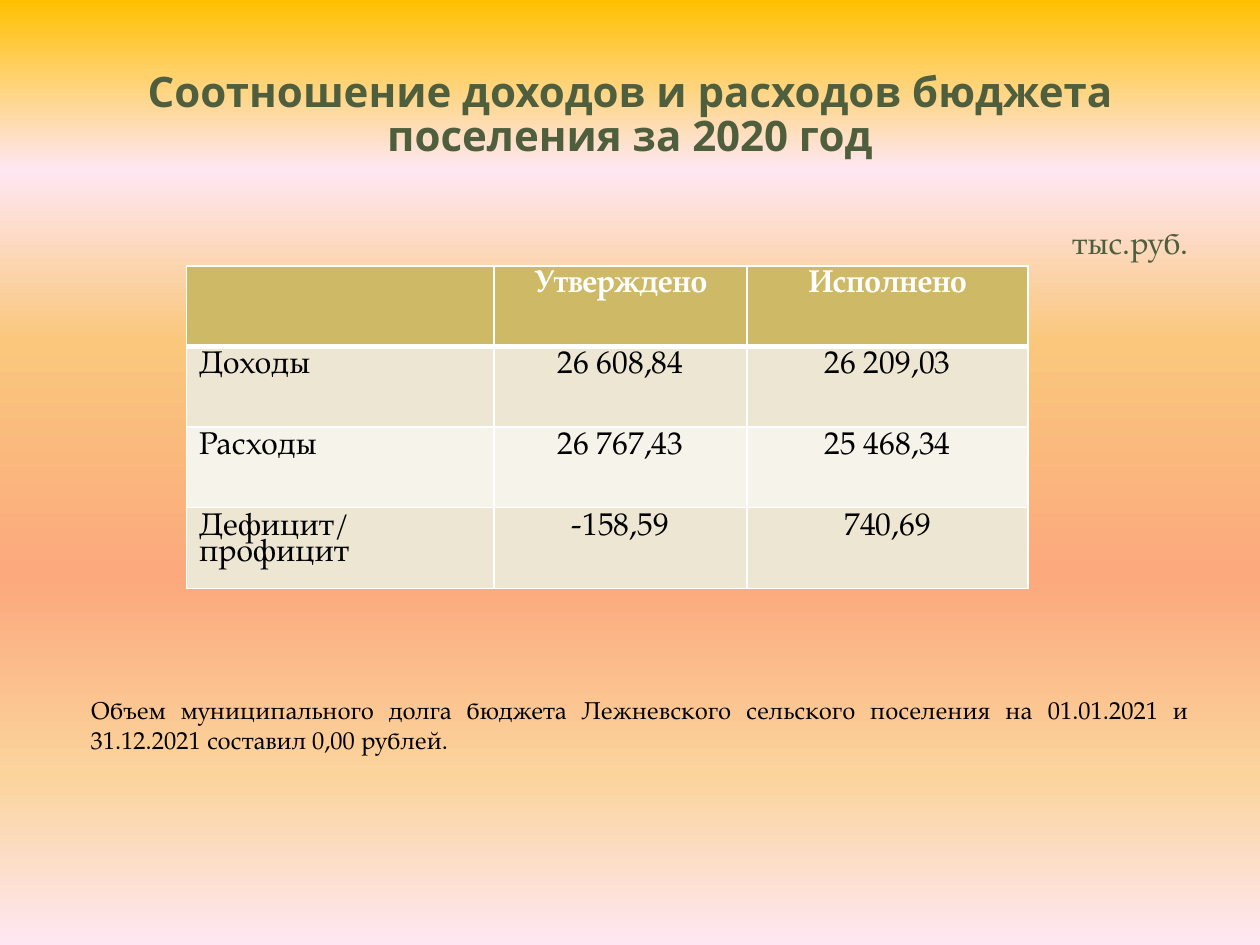
from lxml.etree import SubElement
from pptx import Presentation
from pptx.dml.color import RGBColor
from pptx.enum.text import MSO_ANCHOR, MSO_AUTO_SIZE, PP_ALIGN as AL
from pptx.oxml.ns import qn
from pptx.util import Inches, Pt

GREEN = RGBColor(0x4F, 0x5E, 0x3C)
BLACK = RGBColor(0, 0, 0)
WHITE = RGBColor(0xFF, 0xFF, 0xFF)
GOLD = RGBColor(0xCE, 0xB9, 0x66)
BAND_DARK = RGBColor(0xED, 0xE6, 0xD3)
BAND_LIGHT = RGBColor(0xF6, 0xF3, 0xEA)
SKY = [(0, "FFC000"), (18, "FEE7F2"), (36, "FAC77D"),
       (61, "FBA97D"), (82, "FBD49C"), (100, "FEE7F2")]


class BudgetSlide:
    title_font = "Open Sans"
    body_font = "TeX Gyre Pagella"

    def __init__(self, prs):
        self.s = prs.slides.add_slide(prs.slide_layouts[5])

    def background(self, stops):
        fill = self.s.background.fill
        fill.gradient()
        fill.gradient_angle = 270  # counter-clockwise: top to bottom
        gs_lst = fill.gradient_stops[0]._gs.getparent()
        for gs in list(gs_lst):
            gs_lst.remove(gs)
        for pos, color in stops:
            gs = SubElement(gs_lst, qn("a:gs"), pos=str(pos * 1000))
            SubElement(gs, qn("a:srgbClr"), val=color)

    def set_text(self, tf, text, size, color, align, font=None, bold=False, spacing=None):
        p = tf.paragraphs[0]
        p.text = text
        p.alignment = align
        p.line_spacing = spacing
        for r in p.runs:
            r.font.name = font or self.body_font
            r.font.size, r.font.bold = Pt(size), bold
            r.font.color.rgb = color

    def title(self, text, x, y, w, h):
        sp = self.s.shapes.title
        sp.left, sp.top, sp.width, sp.height = map(Inches, (x, y, w, h))
        tf = sp.text_frame
        tf.word_wrap = True
        tf.auto_size = MSO_AUTO_SIZE.NONE
        tf.vertical_anchor = MSO_ANCHOR.MIDDLE
        self.set_text(tf, text, 24, GREEN, AL.CENTER, self.title_font, True, 0.88)

    def text(self, text, x, y, w, h, size, color, align):
        tf = self.s.shapes.add_textbox(*map(Inches, (x, y, w, h))).text_frame
        tf.word_wrap = True
        tf.auto_size = MSO_AUTO_SIZE.SHAPE_TO_FIT_TEXT
        self.set_text(tf, text, size, color, align)

    def borders(self, cell, **widths):
        tc_pr = cell._tc.get_or_add_tcPr()
        for i, side in enumerate("LRTB"):
            ln = tc_pr.makeelement(qn(f"a:ln{side}"), {"w": str(Pt(widths.get(side, 1)))})
            fill = SubElement(ln, qn("a:solidFill"))
            SubElement(fill, qn("a:srgbClr"), val=str(WHITE))
            tc_pr.insert(i, ln)

    def table(self, rows, x, y, col_widths, row_height):
        frame = self.s.shapes.add_table(
            len(rows), len(col_widths), Inches(x), Inches(y),
            Inches(sum(col_widths)), Inches(row_height * len(rows)))
        table = frame.table
        for col, width in zip(table.columns, col_widths):
            col.width = Inches(width)
        for i, row in enumerate(rows):
            table.rows[i].height = Inches(row_height)
            head = i == 0
            for j, value in enumerate(row):
                cell = table.cell(i, j)
                cell.fill.solid()
                cell.fill.fore_color.rgb = GOLD if head else BAND_DARK if i % 2 else BAND_LIGHT
                # The rule under the header is thicker
                self.borders(cell, B=3 if head else 1, T=3 if i == 1 else 1)
                if value:
                    self.set_text(cell.text_frame, value, 18, WHITE if head else BLACK,
                                  AL.CENTER if j else AL.LEFT, bold=head, spacing=0.83)


def main():
    prs = Presentation()
    prs.slide_width, prs.slide_height = Inches(10), Inches(7.5)
    slide = BudgetSlide(prs)

    # Background and title
    slide.background(SKY)
    slide.title("Соотношение доходов и расходов бюджета поселения за 2020 год",
                0.5, 0.3, 9, 1.25)

    # Budget table with its unit
    slide.table([("", "Утверждено", "Исполнено"),
                 ("Доходы", "26 608,84", "26 209,03"),
                 ("Расходы", "26 767,43", "25 468,34"),
                 ("Дефицит/ профицит", "-158,59", "740,69")],
                1.48, 2.11, (2.44, 2.01, 2.23), 0.64)
    slide.text("тыс.руб.", 7.58, 1.72, 1.95, 0.4, 18, GREEN, AL.RIGHT)

    # Note on the debt
    slide.text("Объем муниципального долга бюджета Лежневского сельского поселения "
               "на 01.01.2021 и 31.12.2021 составил 0,00 рублей.",
               0.62, 5.47, 8.91, 0.57, 14, BLACK, AL.JUSTIFY)

    prs.save("out.pptx")


if __name__ == "__main__":
    main()
